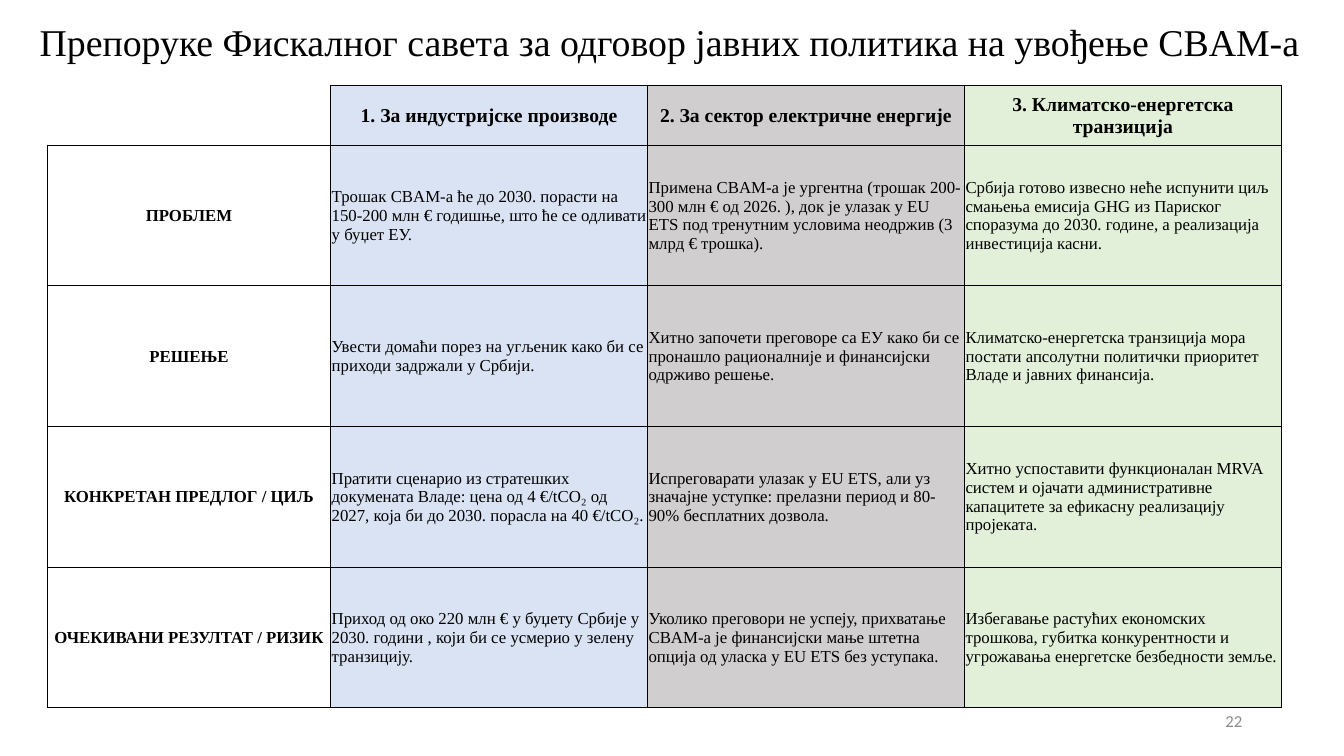
from pptx import Presentation
from pptx.dml.color import RGBColor
from pptx.enum.text import MSO_ANCHOR as Anchor, MSO_AUTO_SIZE as AutoSize, PP_ALIGN as Align
from pptx.oxml import parse_xml
from pptx.oxml.ns import nsdecls
from pptx.util import Inches, Pt

COLORS = {
    "text": "000000",
    "border": "000000",
    "number": "8C8C8C",
    "label": "FFFFFF",
    "industry": "DAE3F3",
    "electricity": "D0CECE",
    "transition": "E2F0D9",
}
COLUMN_FILLS = ["label", "industry", "electricity", "transition"]
THICK, THIN = 1, 0.5

ROWS = [
    ["", "1. За индустријске производе", "2. За сектор електричне енергије",
     "3. Климатско-енергетска транзиција"],
    ["ПРОБЛЕМ",
     "Трошак CBAM-а ће до 2030. порасти на 150-200 млн € годишње, што ће се одливати у буџет ЕУ.",
     "Примена CBAM-а је ургентна (трошак 200-300 млн € од 2026. ), док је улазак у EU ETS "
     "под тренутним условима неодржив (3 млрд € трошка).",
     "Србија готово извесно неће испунити циљ смањења емисија GHG из Париског споразума "
     "до 2030. године, а реализација инвестиција касни."],
    ["РЕШЕЊЕ",
     "Увести домаћи порез на угљеник како би се приходи задржали у Србији.",
     "Хитно започети преговоре са ЕУ како би се пронашло рационалније и финансијски "
     "одрживо решење.",
     "Климатско-енергетска транзиција мора постати апсолутни политички приоритет Владе "
     "и јавних финансија."],
    ["КОНКРЕТАН ПРЕДЛОГ / ЦИЉ",
     "Пратити сценарио из стратешких докумената Владе: цена од 4 €/tCO₂ од 2027, која би "
     "до 2030. порасла на 40 €/tCO₂.",
     "Испреговарати улазак у EU ETS, али уз значајне уступке: прелазни период и 80-90% "
     "бесплатних дозвола.",
     "Хитно успоставити функционалан MRVA систем и ојачати административне капацитете "
     "за ефикасну реализацију пројеката."],
    ["ОЧЕКИВАНИ РЕЗУЛТАТ / РИЗИК",
     "Приход од око 220 млн € у буџету Србије у 2030. години , који би се усмерио у "
     "зелену транзицију.",
     "Уколико преговори не успеју, прихватање CBAM-а је финансијски мање штетна опција "
     "од уласка у EU ETS без уступака.",
     "Избегавање растућих економских трошкова, губитка конкурентности и угрожавања "
     "енергетске безбедности земље."],
]


class SlideBuilder:
    def __init__(self, presentation):
        self.font = "Times New Roman"
        self.slide = presentation.slides.add_slide(presentation.slide_layouts[5])

    def add_text(self, frame, text, size, color="text", align=Align.LEFT, bold=False, font=None):
        paragraph = frame.paragraphs[0]
        paragraph.alignment = align
        run = paragraph.add_run()
        run.text = text
        run.font.name = font or self.font
        run.font.size = Pt(size)
        run.font.bold = bold
        run.font.color.rgb = RGBColor.from_string(COLORS[color])
        return paragraph

    def title(self, text, left, top, width, height, size):
        shape = self.slide.shapes.title
        shape.left, shape.top = Inches(left), Inches(top)
        shape.width, shape.height = Inches(width), Inches(height)
        frame = shape.text_frame
        frame.word_wrap = True
        frame.auto_size = AutoSize.NONE
        frame.vertical_anchor = Anchor.MIDDLE
        self.add_text(frame, text, size, align=Align.CENTER).line_spacing = 0.9

    def slide_number(self, text, left, top, width, height):
        box = self.slide.shapes.add_textbox(*map(Inches, (left, top, width, height)))
        frame = box.text_frame
        frame.word_wrap = True
        frame.vertical_anchor = Anchor.MIDDLE
        self.add_text(frame, text, 12, "number", Align.RIGHT, font="Calibri")

    def borders(self, cell, widths):
        properties = cell._tc.get_or_add_tcPr()
        for index, (side, width) in enumerate(widths.items()):
            paint = (f'<a:solidFill><a:srgbClr val="{COLORS["border"]}"/></a:solidFill>'
                     if width else "<a:noFill/>")
            line = f'<a:ln{side} {nsdecls("a")} w="{Pt(width)}">{paint}</a:ln{side}>'
            properties.insert(index, parse_xml(line))

    def cell(self, cell, text, fill, header, label):
        cell.fill.solid()
        cell.fill.fore_color.rgb = RGBColor.from_string(COLORS[fill])
        cell.vertical_anchor = Anchor.MIDDLE
        cell.margin_left = cell.margin_right = cell.margin_top = Inches(0.01)
        cell.margin_bottom = 0
        if text:
            strong = header or label
            self.add_text(cell.text_frame, text, 14 if header else 12, bold=strong,
                          align=Align.CENTER if strong else Align.LEFT)

    def table(self, rows, left, top, width, height, label_width, header_height):
        last_row, last_column = len(rows) - 1, len(rows[0]) - 1
        frame = self.slide.shapes.add_table(last_row + 1, last_column + 1,
                                            *map(Inches, (left, top, width, height)))
        table = frame.table
        table.first_row = table.horz_banding = False

        # Label column and header row are fixed, the rest share the space
        for index, column in enumerate(table.columns):
            column.width = Inches((width - label_width) / last_column if index else label_width)
        for index, row in enumerate(table.rows):
            row.height = Inches((height - header_height) / last_row if index else header_height)

        # Thick outline and header rule, thin inner lines, open corner
        for r, texts in enumerate(rows):
            for c, text in enumerate(texts):
                cell = table.cell(r, c)
                corner = r == c == 0
                self.cell(cell, text, COLUMN_FILLS[c], header=r == 0, label=c == 0)
                self.borders(cell, {
                    "L": 0 if corner else THICK if c == 0 or (r, c) == (0, 1) else THIN,
                    "R": THICK if corner or c == last_column else THIN,
                    "T": 0 if corner else THICK if r <= 1 else THIN,
                    "B": THICK if r in (0, last_row) else THIN,
                })


def main():
    presentation = Presentation()
    presentation.slide_width = Inches(13.33)
    presentation.slide_height = Inches(7.5)
    builder = SlideBuilder(presentation)
    builder.title("Препоруке Фискалног савета за одговор јавних политика на увођење CBAM-a",
                  0.23, 0.14, 12.82, 0.6, size=27)
    builder.table(ROWS, 0.47, 0.85, 12.24, 6.17, label_width=2.81, header_height=0.59)
    builder.slide_number("22", 9.42, 6.95, 3, 0.4)
    presentation.save("out.pptx")


if __name__ == "__main__":
    main()
